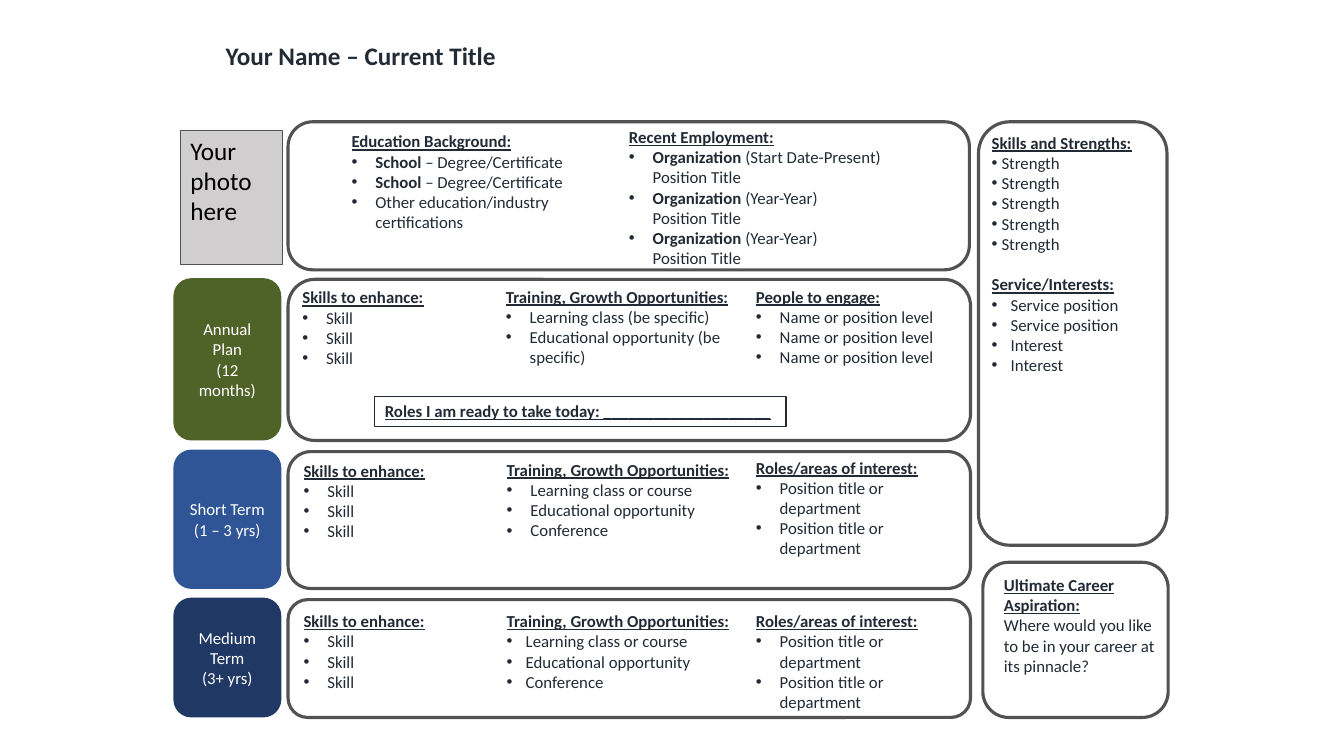
import pptx
import pptx.util
import pptx.dml.color
import pptx.enum.shapes
import pptx.enum.text
import lxml.etree

Cm, Pt = pptx.util.Cm, pptx.util.Pt
Kind = pptx.enum.shapes.MSO_SHAPE
Fit = pptx.enum.text.MSO_AUTO_SIZE
Align = pptx.enum.text.PP_ALIGN
Anchor = pptx.enum.text.MSO_ANCHOR
INK, GREY = "222A35", "525252"
A = "{http://schemas.openxmlformats.org/drawingml/2006/main}"


def rgb(code):
    return pptx.dml.color.RGBColor.from_string(code)


def style(run, color=INK, size=12, bold=False, line=False):
    run.font.name = "Calibri"
    run.font.size = Pt(size)
    run.font.color.rgb = rgb(color)
    run.font.bold = bold
    run.font.underline = line


deck = pptx.Presentation()
deck.slide_width, deck.slide_height = Cm(33.87), Cm(19.05)
slide = deck.slides.add_slide(deck.slide_layouts[6])
shapes = slide.shapes

# Title
title = shapes.add_textbox(Cm(5.44), Cm(0.89), Cm(8.33), Cm(1.02))
title.text_frame.word_wrap = True
title.text_frame.text = "Your Name – Current Title"
style(title.text_frame.paragraphs[0].runs[0], size=18, bold=True)

# Term labels
terms = [
    (7.01, 4.09, "4F6228", "Annual Plan\n(12 months)"),
    (11.33, 3.51, "2F5597", "Short Term\n(1 – 3 yrs)"),
    (15.06, 3.02, "203864", "Medium Term\n(3+ yrs)"),
]
for top, high, color, text in terms:
    term = shapes.add_shape(Kind.ROUNDED_RECTANGLE, Cm(4.37), Cm(top), Cm(2.72), Cm(high))
    term.shadow.inherit = False
    term.fill.solid()
    term.fill.fore_color.rgb = rgb(color)
    term.line.fill.background()
    frame = term.text_frame
    frame.word_wrap = True
    frame.vertical_anchor = Anchor.MIDDLE
    frame.text = text
    for para in frame.paragraphs:
        para.alignment = Align.CENTER
        style(para.runs[0], "FFFFFF")

# Outlined panels
panels = [
    (7.26, 3.07, 17.17, 3.73),
    (7.26, 7.04, 17.2, 4.06),
    (7.26, 11.38, 17.2, 3.45),
    (7.26, 15.11, 17.2, 2.97),
    (24.77, 14.17, 4.67, 3.91),
    (24.66, 3.07, 4.75, 10.67),
]
for area in panels:
    panel = shapes.add_shape(Kind.ROUNDED_RECTANGLE, *map(Cm, area))
    panel.shadow.inherit = False
    panel.fill.background()
    panel.line.color.rgb = rgb(GREY)
    panel.line.width = Pt(2.25)

# Notes: area, then sections of heading, bullet indent and items ("|" parts runs)
skills = [("Skills to enhance:", 0.6, ["Skill"] * 3)]
roles = [("Roles/areas of interest:", 0.6, ["Position title or department"] * 2)]
train = "Training, Growth Opportunities:"
course = ["Learning class or course", "Educational opportunity", "Conference"]
notes = [
    # Background
    ((8.61, 3.18, 7.26, 2.82), [("Education Background:", 0.6, [
        "School |– Degree/Certificate",
        "School |– Degree/Certificate",
        "Other education/industry certifications"])]),
    ((15.6, 3.07, 10.26, 3.84), [("Recent Employment:", 0.6, [
        "Organization |(Start Date-Present)|\v|Position Title",
        "Organization |(Year-Year)|\v|Position Title",
        "Organization |(Year-Year)|\v|Position Title"])]),
    # Annual plan
    ((7.37, 7.11, 5.59, 2.82), skills),
    ((12.5, 7.09, 7.06, 2.31), [(train, 0.6, [
        "Learning class (be specific)",
        "Educational opportunity (be specific)"])]),
    ((18.8, 7.09, 5.18, 2.82), [("People to engage:", 0.6, ["Name or position level"] * 3)]),
    # Short term
    ((7.4, 11.48, 5.51, 3.33), skills),
    ((12.52, 11.46, 7.06, 3.84), [(train, 0.6, course)]),
    ((18.8, 11.4, 5.69, 2.82), roles),
    # Medium term
    ((7.4, 15.27, 5.51, 3.33), skills),
    ((12.52, 15.27, 7.06, 3.33), [(train, 0.48, course)]),
    ((18.8, 15.27, 4.7, 2.82), roles),
    # Right column
    ((24.74, 3.22, 5.54, 7.95), [
        ("Skills and Strengths:", 0.25, ["Strength"] * 5),
        ("Service/Interests:", 0.48, ["Service position"] * 2 + ["Interest"] * 2)]),
    ((25.05, 14.36, 4.67, 2.82), [("Ultimate Career Aspiration:", 0, [
        "Where would you like to be in your career at its pinnacle?"])]),
]
for area, parts in notes:
    frame = shapes.add_textbox(*map(Cm, area)).text_frame
    frame.word_wrap = True
    frame.auto_size = Fit.SHAPE_TO_FIT_TEXT
    for place, (head, indent, items) in enumerate(parts):
        para = frame.add_paragraph() if place else frame.paragraphs[0]
        para.text = head
        style(para.runs[0], bold=True, line=True)
        if place:
            para.space_before = Pt(14.6)
        for item in items:
            para = frame.add_paragraph()
            if indent:
                props = para._p.get_or_add_pPr()
                props.set("marL", str(Cm(indent)))
                props.set("indent", str(-Cm(indent)))
                lxml.etree.SubElement(props, A + "buFont", typeface="Arial")
                lxml.etree.SubElement(props, A + "buChar", char="•")
            bits = item.split("|")
            for spot, bit in enumerate(bits):
                if bit == "\v":
                    para.add_line_break()
                    continue
                run = para.add_run()
                run.text = bit
                style(run, bold=spot == 0 and len(bits) > 1)

# Ready roles and photo boxes
boxes = [
    ((9.45, 9.98, 10.36, 0.77), None, INK, False,
     "Roles I am ready to take today: ____________________",
     dict(bold=True, line=True)),
    ((4.55, 3.28, 2.56, 3.38), "D0CECE", GREY, True,
     "Your photo here", dict(color="000000", size=18)),
]
for area, fill, edge, wrap, text, look in boxes:
    box = shapes.add_shape(Kind.RECTANGLE, *map(Cm, area))
    box.shadow.inherit = False
    if fill:
        box.fill.solid()
        box.fill.fore_color.rgb = rgb(fill)
    else:
        box.fill.background()
    box.line.color.rgb = rgb(edge)
    box.line.width = Pt(0.75)
    frame = box.text_frame
    frame.word_wrap = wrap
    frame.vertical_anchor = Anchor.TOP
    frame.text = text
    frame.paragraphs[0].alignment = Align.LEFT
    style(frame.paragraphs[0].runs[0], **look)

deck.save("out.pptx")
